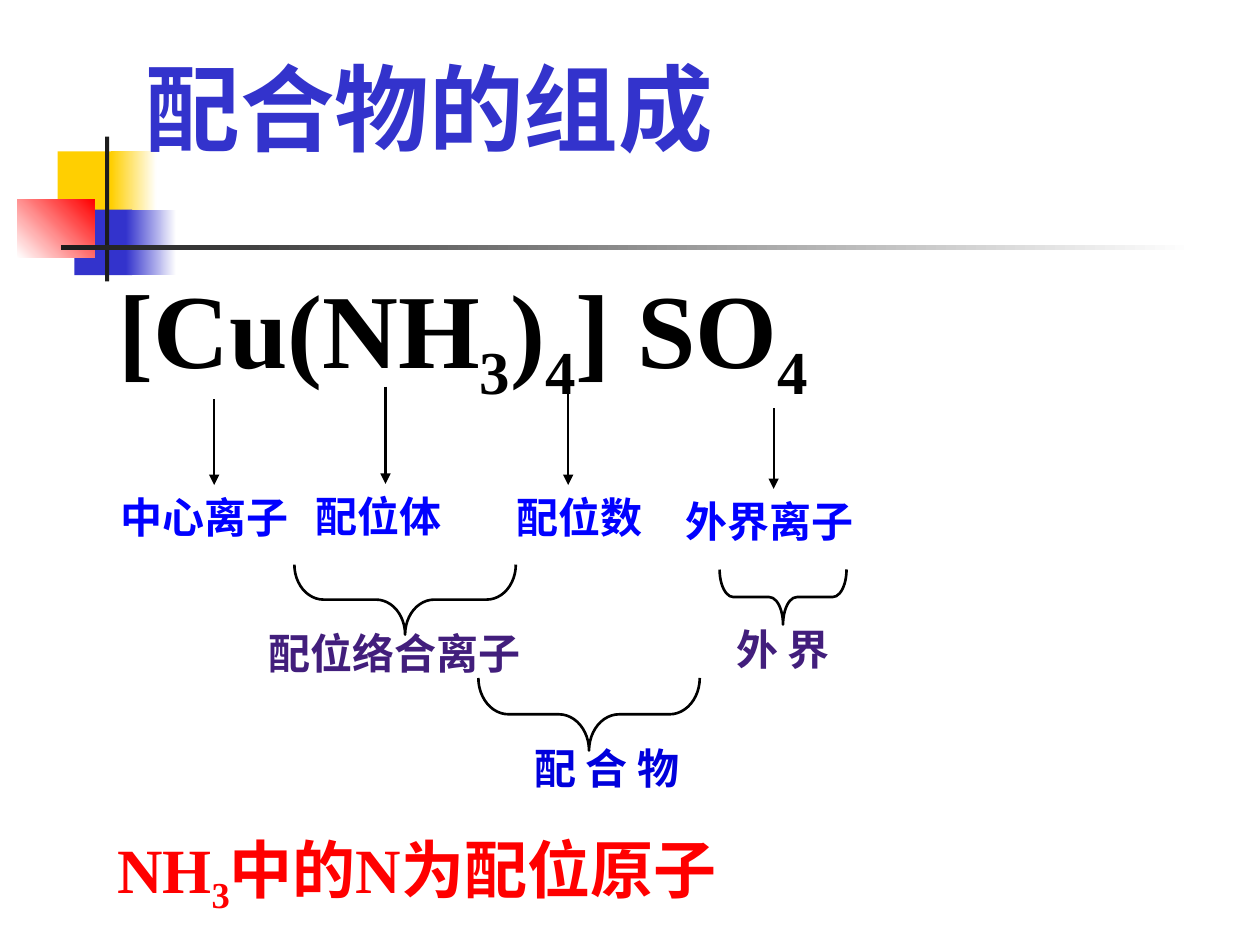
from lxml.etree import SubElement
from pptx import Presentation
from pptx.dml.color import RGBColor
from pptx.enum.shapes import MSO_CONNECTOR, MSO_SHAPE
from pptx.enum.text import MSO_ANCHOR, PP_ALIGN
from pptx.oxml.ns import qn
from pptx.util import Pt

YELLOW, INDIGO, RED, CHARCOAL = "FFCF01", "3333CC", "FF0000", "1C1C1C"
BLACK, WHITE, BLUE, PURPLE, NAVY = "000000", "FFFFFF", "0101FF", "421E7C", "0000DC"
SERIF, HAN, TITLE_FONT = "Times New Roman", "Noto Sans CJK SC", "Lato"


def rgb(value):
    """Turn a hex string into a colour."""
    return RGBColor.from_string(value)


class SlideBuilder:
    """Hold the slide and the style its elements share."""

    def __init__(self, slide, latin=SERIF, han=HAN, ink=BLACK):
        """Remember the slide, the fonts and the line colour."""
        self.slide, self.latin, self.han, self.ink = slide, latin, han, ink

    def block(self, left, top, width, height, start, end=None, angle=0):
        """Add a borderless rectangle, plain or fading from start to end."""
        shape = self.slide.shapes.add_shape(
            MSO_SHAPE.RECTANGLE, Pt(left), Pt(top), Pt(width), Pt(height))
        shape.shadow.inherit = False
        shape.line.fill.background()
        if end is None:
            shape.fill.solid()
            shape.fill.fore_color.rgb = rgb(start)
            return
        shape.fill.gradient()
        shape.fill.gradient_angle = angle
        for stop, color in zip(shape.fill.gradient_stops, (start, end)):
            stop.color.rgb = rgb(color)

    def text(self, left, top, width, height, parts, size, color,
             font=None, align=PP_ALIGN.LEFT, anchor=MSO_ANCHOR.TOP):
        """Add bold text in which every second part is a subscript."""
        frame = self.slide.shapes.add_textbox(
            Pt(left), Pt(top), Pt(width), Pt(height)).text_frame
        frame.word_wrap = True
        frame.vertical_anchor = anchor
        paragraph = frame.paragraphs[0]
        paragraph.alignment = align
        for index, part in enumerate(parts):
            run = paragraph.add_run()
            run.text = part
            run.font.size, run.font.bold = Pt(size), True
            run.font.name = font or self.latin
            run.font.color.rgb = rgb(color)
            properties = run._r.get_or_add_rPr()
            SubElement(properties, qn("a:ea")).set("typeface", self.han)
            if index % 2:
                properties.set("baseline", "-25000")

    def label(self, center, top, words, color, font=None):
        """Add a one-line label centred on a given x."""
        width = 180
        self.text(center - width / 2, top, width, 36, [words], 24, color,
                  font, PP_ALIGN.CENTER)

    def arrow(self, x, top, bottom):
        """Add a downward arrow."""
        line = self.slide.shapes.add_connector(
            MSO_CONNECTOR.STRAIGHT, Pt(x), Pt(top), Pt(x), Pt(bottom))
        line.line.color.rgb = rgb(self.ink)
        line.line.width = Pt(1.25)
        SubElement(line.line._get_or_add_ln(), qn("a:tailEnd")).set("type", "triangle")
        SubElement(line._element.spPr, qn("a:effectLst"))

    def brace(self, center, top, width, height, curve):
        """Add a brace that opens upward and points down."""
        middle = top + height / 2
        shape = self.slide.shapes.add_shape(
            MSO_SHAPE.LEFT_BRACE, Pt(center - height / 2), Pt(middle - width / 2),
            Pt(height), Pt(width))
        shape.rotation = 270
        shape.adjustments[0] = curve
        shape.shadow.inherit = False
        shape.fill.background()
        shape.line.color.rgb = rgb(self.ink)
        shape.line.width = Pt(1.5)


def main():
    """Build and save the slide."""
    deck = Presentation()
    deck.slide_width, deck.slide_height = Pt(720), Pt(540)
    builder = SlideBuilder(deck.slides.add_slide(deck.slide_layouts[6]))

    builder.block(33, 86.5, 34.5, 37.5, YELLOW)
    builder.block(63.5, 86.5, 26, 37.5, YELLOW, WHITE)
    builder.block(42.5, 119.8, 33, 37.5, INDIGO)
    builder.block(72, 119.8, 28.8, 37.5, INDIGO, WHITE)
    builder.block(10, 113.8, 44, 33.5, WHITE, RED, 45)
    builder.block(60, 78, 2.4, 82.8, CHARCOAL)
    builder.block(34.6, 140.2, 648, 2.4, CHARCOAL, WHITE)

    builder.text(76.3, 25.2, 545.8, 72, ["配合物的组成"], 54, INDIGO,
                 TITLE_FONT, anchor=MSO_ANCHOR.MIDDLE)
    builder.text(60.5, 147, 486.7, 79.2,
                 ["[Cu(NH", "3", ")", "4", "] SO", "4"], 60, BLACK)

    callouts = [
        ("中心离子", 117, 122.4, 228.2, 277.2),
        ("配位体", 216.4, 220.3, 221, 276.5),
        ("配位数", 331.2, 324.7, 225.4, 277.2),
        ("外界离子", 439.5, 442.1, 233.3, 279.4),
    ]
    for words, center, x, top, bottom in callouts:
        builder.arrow(x, top, bottom)
        builder.label(center, bottom, words, BLUE)

    builder.brace(231.5, 322.6, 126.5, 40, 0.416)
    builder.label(225.4, 355, "配位络合离子", PURPLE)
    builder.brace(447.5, 325.4, 72.5, 31.5, 0.25)
    builder.label(447.5, 352.8, "外 界", PURPLE)
    builder.brace(336.6, 387.4, 126.5, 41.5, 0.416)
    builder.label(346.7, 420.5, "配 合 物", NAVY, HAN)

    builder.text(59.8, 473.8, 396, 50.4, ["NH", "3", "中的N为配位原子"], 36, RED,
                 anchor=MSO_ANCHOR.MIDDLE)
    deck.save("out.pptx")


if __name__ == "__main__":
    main()
